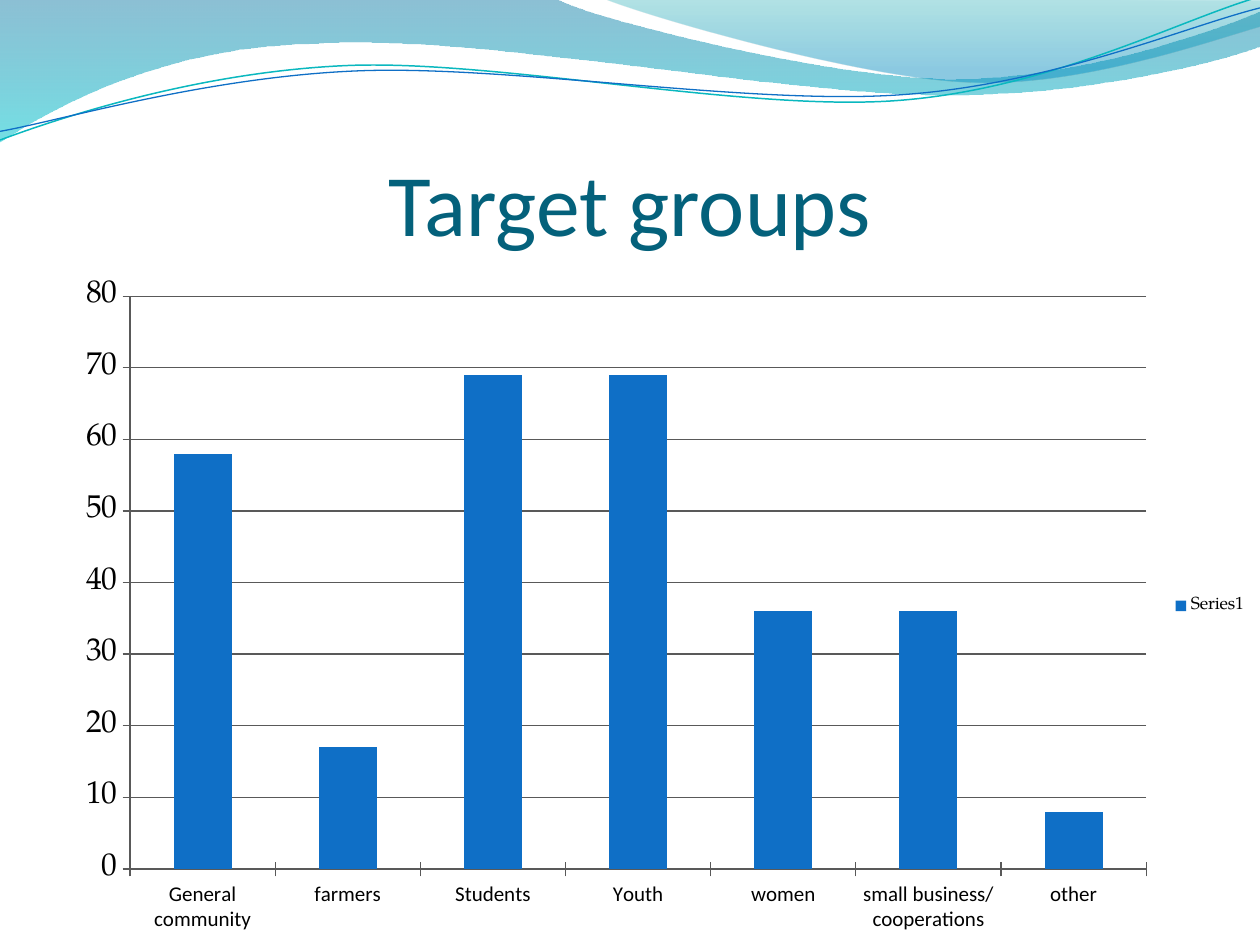
from lxml import etree
from pptx import Presentation
from pptx import util as u
from pptx.chart import data as cd
from pptx.dml.color import RGBColor
from pptx.enum import chart as ch, text
from pptx.oxml import ns

Pt = u.Pt
BLUE = RGBColor(0x0F, 0x6F, 0xC6)
TEAL = RGBColor(0x0A, 0xB8, 0xBF)
TITLE = RGBColor(0x04, 0x61, 0x7B)
BLACK = RGBColor(0, 0, 0)
GRAY = RGBColor(0x59, 0x59, 0x59)
DEEP = RGBColor(0x00, 0x74, 0xA1)
AQUA = RGBColor(0x00, 0xC6, 0xCF)
SEA = RGBColor(0x00, 0xA1, 0xA9)
SKY = RGBColor(0x00, 0x8B, 0xBF)


def draw(bounds, start, parts, close):
    left, top, width, height = bounds
    form = slide.shapes.build_freeform(Pt(left), Pt(top))
    form.add_line_segments([(Pt(left + width), Pt(top + height))], close=close)
    shape = form.convert_to_shape()
    shape.shadow.inherit = False
    route = next(shape._element.iter(ns.qn("a:path")))
    for old in list(route):
        route.remove(old)
    steps = [("moveTo", start)]
    steps += [("lnTo" if len(p) == 2 else "cubicBezTo", p) for p in parts]
    for tag, nums in steps:
        step = etree.SubElement(route, ns.qn("a:" + tag))
        for x, y in zip(nums[::2], nums[1::2]):
            dot = etree.SubElement(step, ns.qn("a:pt"))
            dot.set("x", str(int(Pt(x - left))))
            dot.set("y", str(int(Pt(y - top))))
    if close:
        etree.SubElement(route, ns.qn("a:close"))
    return shape


prs = Presentation()
prs.slide_width, prs.slide_height = Pt(720), Pt(540)
slide = prs.slides.add_slide(prs.slide_layouts[6])

waves = [
    ((-1, -1, 722, 82.5), (0, 0),
     [(317, -1), (343, 12, 478, 45, 546, 45), (614, 45, 690, 19, 720, 6.5),
      (721, 26), (708, 32, 626, 55, 537, 54), (447, 54, 275, 20, 185, 24.5),
      (93, 26, 33, 60, -1, 81.5)], [(0, DEEP, 45), (1, AQUA, 55)]),
    ((345, -1, 375, 50), (345, -1),
     [(366, 8, 491, 45, 554, 47), (616, 50, 692, 23, 720, 15), (720, 0)],
     [(0, SEA, 30), (0.8, SKY, 45)]),
]
for bounds, start, parts, stops in waves:
    wave = draw(bounds, start, parts, True)
    wave.line.fill.background()
    wave.fill.gradient()
    wave.fill.gradient_angle = 270
    for stop, (pos, color, _) in zip(wave.fill.gradient_stops, stops):
        stop.position = pos
        stop.color.rgb = color
    tints = wave._element.spPr.iter(ns.qn("a:srgbClr"))
    for tint, (_, _, alpha) in zip(tints, stops):
        etree.SubElement(tint, ns.qn("a:alpha")).set("val", str(alpha * 1000))

curves = [
    ((-1.4, 15.8, 722, 51.2), (-1.4, 63.1),
     [(34.2, 51.7, 114.3, 29.4, 199.4, 29.9), (284.4, 30.5, 425.8, 67.2, 512, 64.7),
      (599.2, 62.3, 676.1, 25.9, 720.6, 15.4)], TEAL, 0.85),
    ((-1.4, 21.6, 722, 41.8), (-1.1, 58.1),
     [(33.2, 53.7, 118.2, 32.6, 204.3, 33.2), (290.4, 33.7, 429.1, 63.8, 515.3, 61.4),
      (601.4, 59.4, 678.9, 30, 721.4, 21.5)], BLUE, 0.75),
]
for bounds, start, parts, color, width in curves:
    curve = draw(bounds, start, parts, False)
    curve.rotation = 357.3
    curve.fill.background()
    curve.line.color.rgb = color
    curve.line.width = Pt(width)

box = slide.shapes.add_textbox(Pt(36), Pt(55), Pt(648), Pt(90))
frame = box.text_frame
frame.word_wrap = True
frame.vertical_anchor = text.MSO_ANCHOR.BOTTOM
frame.margin_left = frame.margin_right = frame.margin_bottom = 0
frame.margin_top = Pt(3.6)
para = frame.paragraphs[0]
para.alignment = text.PP_ALIGN.CENTER
run = para.add_run()
run.text = "Target groups"
run.font.size = Pt(50)
run.font.name = "Calibri"
run.font.color.rgb = TITLE

data = cd.CategoryChartData()
data.categories = ["General community", "farmers", "Students", "Youth", "women",
                   "small business/ cooperations", "other"]
data.add_series("Series1", [58, 17, 69, 69, 36, 36, 8])
chart = slide.shapes.add_chart(ch.XL_CHART_TYPE.COLUMN_CLUSTERED, Pt(36), Pt(152.6),
                               Pt(684), Pt(387.4), data).chart
chart.has_title = False
chart.font.size = Pt(10)
chart.font.name = "TeX Gyre Pagella"
chart.font.color.rgb = BLACK
chart.has_legend = True
chart.legend.position = ch.XL_LEGEND_POSITION.RIGHT
chart.legend.include_in_layout = False

plot = chart.plots[0]
plot.gap_width = 150
plot.vary_by_categories = False
bars = plot.series[0]
bars.format.fill.solid()
bars.format.fill.fore_color.rgb = BLUE

vals, cats = chart.value_axis, chart.category_axis
vals.minimum_scale, vals.maximum_scale, vals.major_unit = 0, 80, 10
vals.has_major_gridlines = True
for axis, size, face in ((vals, 18, "TeX Gyre Pagella"), (cats, 12, "Calibri")):
    axis.major_tick_mark = ch.XL_TICK_MARK.CROSS
    axis.tick_labels.font.size = Pt(size)
    axis.tick_labels.font.name = face
    axis.tick_labels.font.color.rgb = BLACK
for part in (vals, cats, vals.major_gridlines):
    part.format.line.color.rgb = GRAY
    part.format.line.width = Pt(0.75)

area = chart._chartSpace.chart.plotArea
for old in area.findall(ns.qn("c:layout")):
    area.remove(old)
layout = etree.Element(ns.qn("c:layout"))
manual = etree.SubElement(layout, ns.qn("c:manualLayout"))
for tag, val in (("layoutTarget", "inner"), ("xMode", "edge"), ("yMode", "edge"),
                 ("x", "0.056"), ("y", "0.043"), ("w", "0.849"), ("h", "0.845")):
    etree.SubElement(manual, ns.qn("c:" + tag)).set("val", val)
area.insert(0, layout)

prs.save("out.pptx")
